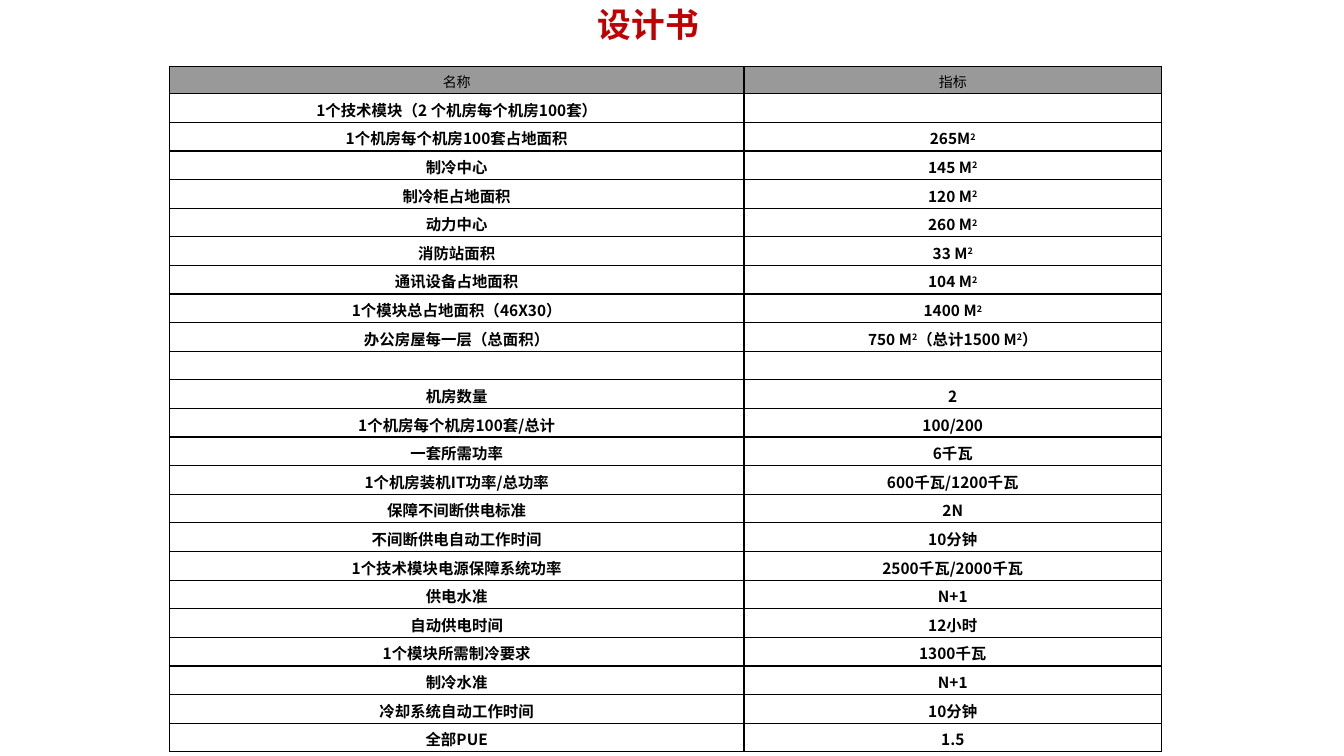
from lxml import etree
from pptx import Presentation
from pptx import util as u
from pptx.dml.color import RGBColor
from pptx.enum import text
from pptx.oxml.ns import qn

RED = RGBColor(0xC0, 0x00, 0x00)
BLACK = RGBColor(0x00, 0x00, 0x00)
GRAY = RGBColor(0x99, 0x99, 0x99)
CJK = "Noto Sans CJK SC"

ROWS = [
    ("名称", "指标"),
    ("1个技术模块（2 个机房每个机房100套）", ""),
    ("1个机房每个机房100套占地面积", "265M²"),
    ("制冷中心", "145 M²"),
    ("制冷柜占地面积", "120 M²"),
    ("动力中心", "260 M²"),
    ("消防站面积", "33 M²"),
    ("通讯设备占地面积", "104 M²"),
    ("1个模块总占地面积（46X30）", "1400 M²"),
    ("办公房屋每一层（总面积）", "750 M²（总计1500 M²）"),
    ("", ""),
    ("机房数量", "2"),
    ("1个机房每个机房100套/总计", "100/200"),
    ("一套所需功率", "6千瓦"),
    ("1个机房装机IT功率/总功率", "600千瓦/1200千瓦"),
    ("保障不间断供电标准", "2N"),
    ("不间断供电自动工作时间", "10分钟"),
    ("1个技术模块电源保障系统功率", "2500千瓦/2000千瓦"),
    ("供电水准", "N+1"),
    ("自动供电时间", "12小时"),
    ("1个模块所需制冷要求", "1300千瓦"),
    ("制冷水准", "N+1"),
    ("冷却系统自动工作时间", "10分钟"),
    ("全部PUE", "1.5"),
]


def add_run(p, content, size, font, color, bold, raised=False):
    r = p.add_run()
    r.text = content
    r.font.size = u.Pt(size)
    r.font.name = font
    r.font.bold = bold
    r.font.color.rgb = color
    rPr = r._r.get_or_add_rPr()
    etree.SubElement(rPr, qn("a:ea")).set("typeface", CJK)
    if raised:
        rPr.set("baseline", "30000")


def add_borders(cell):
    tcPr = cell._tc.get_or_add_tcPr()
    for side in ("lnL", "lnR", "lnT", "lnB"):
        ln = etree.SubElement(tcPr, qn("a:" + side), w=str(u.Pt(1)))
        fill = etree.SubElement(ln, qn("a:solidFill"))
        etree.SubElement(fill, qn("a:srgbClr"), val=str(BLACK))


prs = Presentation()
prs.slide_width, prs.slide_height = u.Inches(13.33), u.Inches(7.5)
s = prs.slides.add_slide(prs.slide_layouts[5])

# Title
title = s.shapes.title
title.left, title.top = u.Inches(5.62), u.Inches(0)
title.width, title.height = u.Inches(1.56), u.Inches(0.48)
tf = title.text_frame
tf.word_wrap = True
tf.auto_size = text.MSO_AUTO_SIZE.NONE
tf.vertical_anchor = text.MSO_ANCHOR.MIDDLE
tf.margin_left, tf.margin_right = u.Inches(0.31), u.Inches(0.08)
tf.margin_top = tf.margin_bottom = u.Inches(0.04)
p = tf.paragraphs[0]
p.alignment = text.PP_ALIGN.LEFT
add_run(p, "设计书", 24, "Karla", RED, True)

# Table: a header row, then equal rows
HEADER_H, TABLE_H = 0.27, 6.8
row_h = (TABLE_H - HEADER_H) / (len(ROWS) - 1)
tbl = s.shapes.add_table(len(ROWS), 2, u.Inches(1.68), u.Inches(0.66),
                         u.Inches(9.84), u.Inches(TABLE_H)).table
tbl.horz_banding = False
for col, width in zip(tbl.columns, (5.7, 4.14)):
    col.width = u.Inches(width)

for i, row in enumerate(ROWS):
    header = i == 0
    tbl.rows[i].height = u.Inches(HEADER_H if header else row_h)
    size, font = (10, "Times New Roman") if header else (11, CJK)
    for j, content in enumerate(row):
        cell = tbl.cell(i, j)
        cell.margin_top, cell.margin_bottom = u.Inches(0.03), u.Inches(0)
        cell.vertical_anchor = text.MSO_ANCHOR.MIDDLE
        add_borders(cell)
        if header:
            cell.fill.solid()
            cell.fill.fore_color.rgb = GRAY
        else:
            cell.fill.background()
        p = cell.text_frame.paragraphs[0]
        p.alignment = text.PP_ALIGN.CENTER
        # Each ² becomes a raised 2
        for k, part in enumerate(content.split("²")):
            if k:
                add_run(p, "2", size, font, BLACK, not header, raised=True)
            if part:
                add_run(p, part, size, font, BLACK, not header)
        # Keeps empty cells from growing their row
        if not content:
            etree.SubElement(p._p, qn("a:endParaRPr"), sz=str(size * 100))

prs.save("out.pptx")
